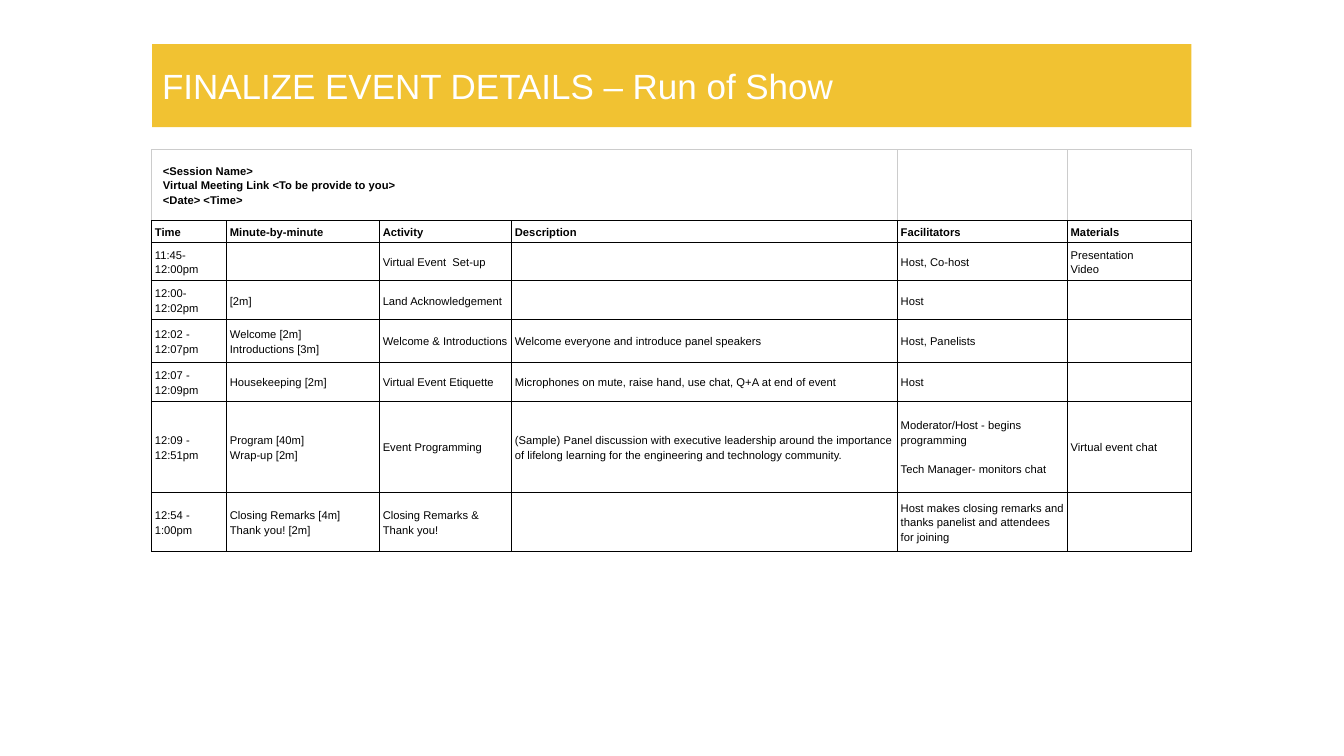
from lxml import etree
from pptx import Presentation
from pptx.dml.color import RGBColor
from pptx.enum.text import MSO_ANCHOR, MSO_AUTO_SIZE, PP_ALIGN
from pptx.oxml.ns import qn
from pptx.util import Pt

MIDDLE = MSO_ANCHOR.MIDDLE
LEFT = PP_ALIGN.LEFT
FIXED = MSO_AUTO_SIZE.NONE
TITLE_ONLY = 5

FONT = "Arial"
COLORS = {"gold": "F1C232", "white": "FFFFFF", "black": "000000", "grey": "CCCCCC"}
GAP = 10.6  # one line of table text

WIDTHS = [53.6, 109.2, 94.4, 275.6, 121.4, 88.6]
HEIGHTS = [50.8, 15.6, 27.4, 27.8, 30.6, 27.8, 65, 42.2]
SHADED = [(4, 3), (5, 3)]
ROWS = [
    ["<Session Name>\nVirtual Meeting Link <To be provide to you>\n<Date> <Time>",
     "", "", "", "", ""],
    ["Time", "Minute-by-minute", "Activity", "Description", "Facilitators", "Materials"],
    ["11:45-\n12:00pm", "", "Virtual Event  Set-up", "", "Host, Co-host",
     "Presentation\nVideo"],
    ["12:00-\n12:02pm", "[2m]", "Land Acknowledgement", "", "Host", ""],
    ["12:02 -\n12:07pm", "Welcome [2m]\nIntroductions [3m]", "Welcome & Introductions",
     "Welcome everyone and introduce panel speakers", "Host, Panelists", ""],
    ["12:07 -\n12:09pm", "Housekeeping [2m]", "Virtual Event Etiquette",
     "Microphones on mute, raise hand, use chat, Q+A at end of event", "Host", ""],
    ["12:09 -\n12:51pm", "Program [40m]\nWrap-up [2m]", "Event Programming",
     "(Sample) Panel discussion with executive leadership around the importance "
     "of lifelong learning for the engineering and technology community.",
     "Moderator/Host - begins programming\nTech Manager- monitors chat",
     "Virtual event chat"],
    ["12:54 -\n1:00pm", "Closing Remarks [4m]\nThank you! [2m]",
     "Closing Remarks & Thank you!", "",
     "Host makes closing remarks and thanks panelist and attendees for joining", ""],
]


def color(name):
    return RGBColor.from_string(COLORS[name])


def style(para, size, tint, bold=False):
    font = para.font
    font.name, font.size, font.bold = FONT, Pt(size), bold
    font.color.rgb = color(tint)


def add_title(slide, left, top, width, height):
    title = slide.shapes.title
    title.left, title.top = Pt(left), Pt(top)
    title.width, title.height = Pt(width), Pt(height)
    title.fill.solid()
    title.fill.fore_color.rgb = color("gold")
    frame = title.text_frame
    frame.text = "FINALIZE EVENT DETAILS – Run of Show"
    frame.word_wrap, frame.auto_size = True, FIXED
    frame.vertical_anchor = MIDDLE
    frame.margin_left = frame.margin_right = Pt(7.2)
    frame.margin_top = frame.margin_bottom = Pt(7.2)
    para = frame.paragraphs[0]
    para.alignment = LEFT
    style(para, 25, "white")


def add_edges(cell, tints):
    """Draw the left, right, top and bottom borders in the given colours."""
    props = cell._tc.get_or_add_tcPr()
    for side, tint in zip("LRTB", tints):
        line = etree.SubElement(props, qn(f"a:ln{side}"), w=str(Pt(0.75)))
        fill = etree.SubElement(line, qn("a:solidFill"))
        etree.SubElement(fill, qn("a:srgbClr"), val=COLORS[tint])


def fill_cell(cell, text, row, col):
    cell.text = text
    cell.vertical_anchor = MIDDLE
    cell.margin_left = cell.margin_right = Pt(2.25 if row else 8)
    cell.margin_top = cell.margin_bottom = Pt(1.5)
    for para in cell.text_frame.paragraphs:
        para.line_spacing = 1.15
        style(para, 8, "black", row < 2)
    edge = "black" if row else "grey"
    add_edges(cell, [edge, edge, edge, "black"])
    if (row, col) in SHADED:
        cell.fill.solid()
        cell.fill.fore_color.rgb = color("white")
    else:
        cell.fill.background()


def add_schedule(slide, left, top):
    frame = slide.shapes.add_table(len(ROWS), len(WIDTHS), Pt(left), Pt(top),
                                   Pt(sum(WIDTHS)), Pt(sum(HEIGHTS)))
    table = frame.table
    table.first_row = table.horz_banding = False
    for column, width in zip(table.columns, WIDTHS):
        column.width = Pt(width)
    for line, height in zip(table.rows, HEIGHTS):
        line.height = Pt(height)
    for row, texts in enumerate(ROWS):
        for col, text in enumerate(texts):
            fill_cell(table.cell(row, col), text, row, col)
    table.cell(0, 0).merge(table.cell(0, 3))
    table.cell(6, 4).text_frame.paragraphs[1].space_before = Pt(GAP)


def main():
    deck = Presentation()
    deck.slide_width, deck.slide_height = Pt(960), Pt(540)
    slide = deck.slides.add_slide(deck.slide_layouts[TITLE_ONLY])
    add_title(slide, 108.6, 31.6, 742.4, 59.2)
    add_schedule(slide, 108.4, 106.8)
    deck.save("out.pptx")


if __name__ == "__main__":
    main()
